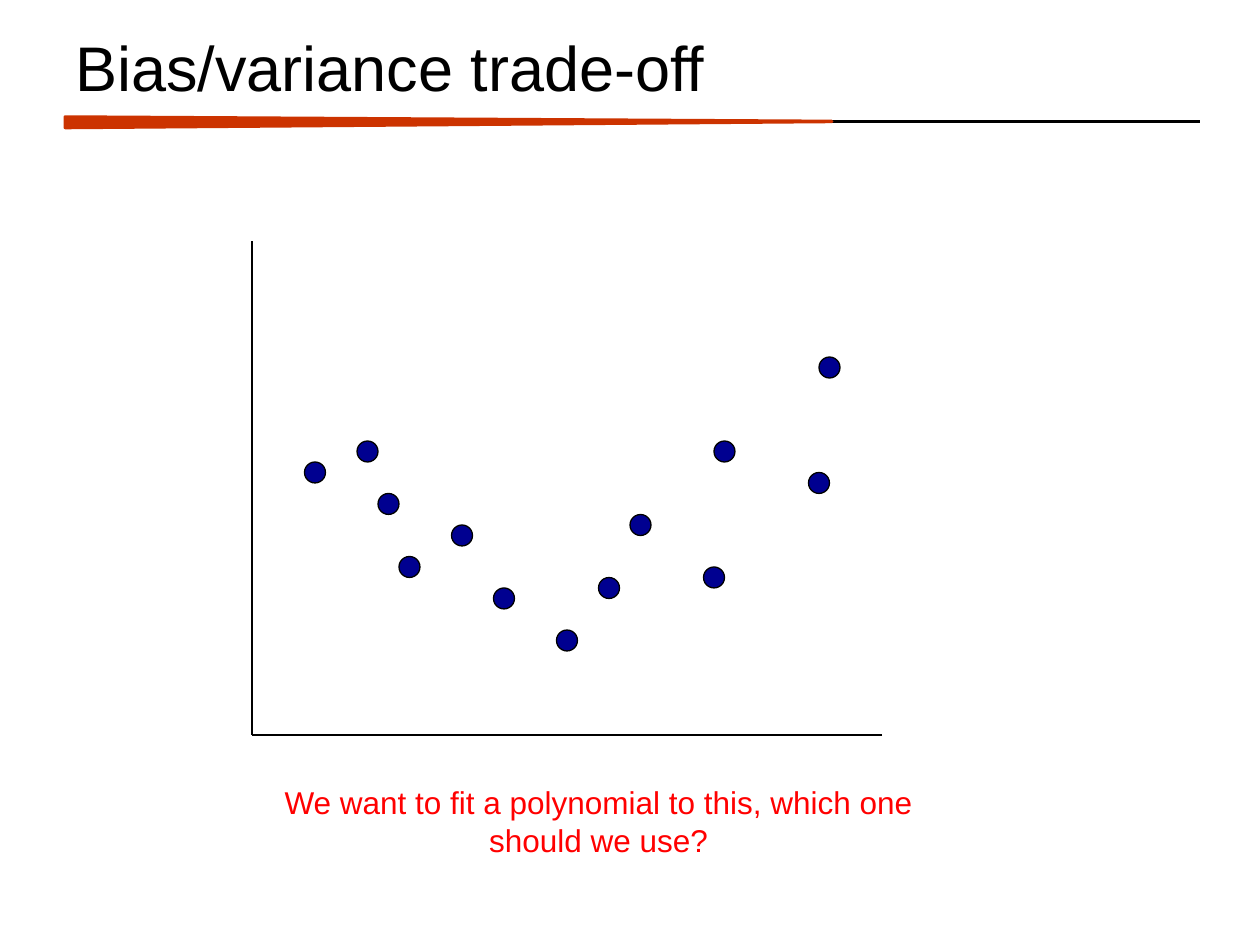
import dataclasses
import typing

import pptx
import pptx.dml.color
import pptx.enum.shapes
import pptx.enum.text
import pptx.util
import lxml.etree

Pt = pptx.util.Pt
Kind = pptx.enum.shapes.MSO_SHAPE
Align = pptx.enum.text.PP_ALIGN
Anchor = pptx.enum.text.MSO_ANCHOR


@dataclasses.dataclass(frozen=True)
class Theme:
    font: str = "Arial"
    ink: str = "000000"
    accent: str = "CC3300"
    dot: str = "000090"
    ask: str = "FF0000"
    head_size: float = 36
    ask_size: float = 18
    thick: float = 2
    thin: float = 0.75


class Box(typing.NamedTuple):
    left: float
    top: float
    width: float
    height: float


class Rule(typing.NamedTuple):
    start: tuple[float, float]
    end: tuple[float, float]
    weight: float


class Label(typing.NamedTuple):
    text: str
    box: Box
    size: float
    color: str
    frame: dict[str, typing.Any]
    align: Align


THEME = Theme()
STEP = 6
DOT = 12
AXIS = (144, 420)
RULES = [
    Rule((37.5, 69.4), (685.5, 69.4), THEME.thick),
    Rule((144, 138), AXIS, THEME.thin),
    Rule((504, 420), AXIS, THEME.thin),
]
WEDGE = Box(253.3, -149.1, 6, 438)
DOTS = [
    (29, 44), (34, 42), (36, 47), (38, 53), (43, 50), (47, 56), (53, 60),
    (57, 55), (60, 49), (67, 54), (68, 42), (77, 45), (78, 34),
]
LABELS = [
    Label("Bias/variance trade-off", Box(36, 12, 648, 52), THEME.head_size,
          THEME.ink, {"vertical_anchor": Anchor.MIDDLE}, Align.LEFT),
    Label("We want to fit a polynomial to this, which one should we use?",
          Box(150, 444, 384, 65.5), THEME.ask_size, THEME.ask,
          {"vertical_anchor": Anchor.TOP}, Align.CENTER),
]


def shade(code: str) -> pptx.dml.color.RGBColor:
    return pptx.dml.color.RGBColor.from_string(code)


def apply(item: typing.Any, values: dict[str, typing.Any]) -> None:
    for name, value in values.items():
        setattr(item, name, value)


def stroke(line: typing.Any, color: str, weight: float) -> None:
    line.color.rgb = shade(color)
    line.width = Pt(weight)


def draw_rule(slide: typing.Any, rule: Rule) -> None:
    ends = [Pt(n) for n in (*rule.start, *rule.end)]
    line = slide.shapes.add_connector(
        pptx.enum.shapes.MSO_CONNECTOR.STRAIGHT, *ends)
    stroke(line.line, THEME.ink, rule.weight)
    props = line._element.spPr
    lxml.etree.SubElement(props, pptx.oxml.ns.qn("a:effectLst"))


def draw_shape(slide: typing.Any, kind: Kind, box: Box, fill: str,
               edge: str, weight: float) -> typing.Any:
    shape = slide.shapes.add_shape(kind, *map(Pt, box))
    shape.shadow.inherit = False
    shape.fill.solid()
    shape.fill.fore_color.rgb = shade(fill)
    stroke(shape.line, edge, weight)
    return shape


def draw_label(slide: typing.Any, label: Label) -> None:
    frame = slide.shapes.add_textbox(*map(Pt, label.box)).text_frame
    apply(frame, {"word_wrap": True, **label.frame})
    para = frame.paragraphs[0]
    para.alignment = label.align
    run = para.add_run()
    run.text = label.text
    apply(run.font, {"name": THEME.font, "size": Pt(label.size)})
    run.font.color.rgb = shade(label.color)


def main() -> None:
    deck = pptx.Presentation()
    apply(deck, {"slide_width": Pt(720), "slide_height": Pt(540)})
    slide = deck.slides.add_slide(deck.slide_layouts[6])
    for rule in RULES:
        draw_rule(slide, rule)
    wedge = draw_shape(slide, Kind.ISOSCELES_TRIANGLE, WEDGE,
                       THEME.accent, THEME.accent, THEME.thick)
    wedge.rotation = 90
    wedge.adjustments[0] = 0.42
    for col, row in DOTS:
        draw_shape(slide, Kind.OVAL, Box(col * STEP, row * STEP, DOT, DOT),
                   THEME.dot, THEME.ink, THEME.thin)
    for label in LABELS:
        draw_label(slide, label)
    deck.save("out.pptx")


if __name__ == "__main__":
    main()
